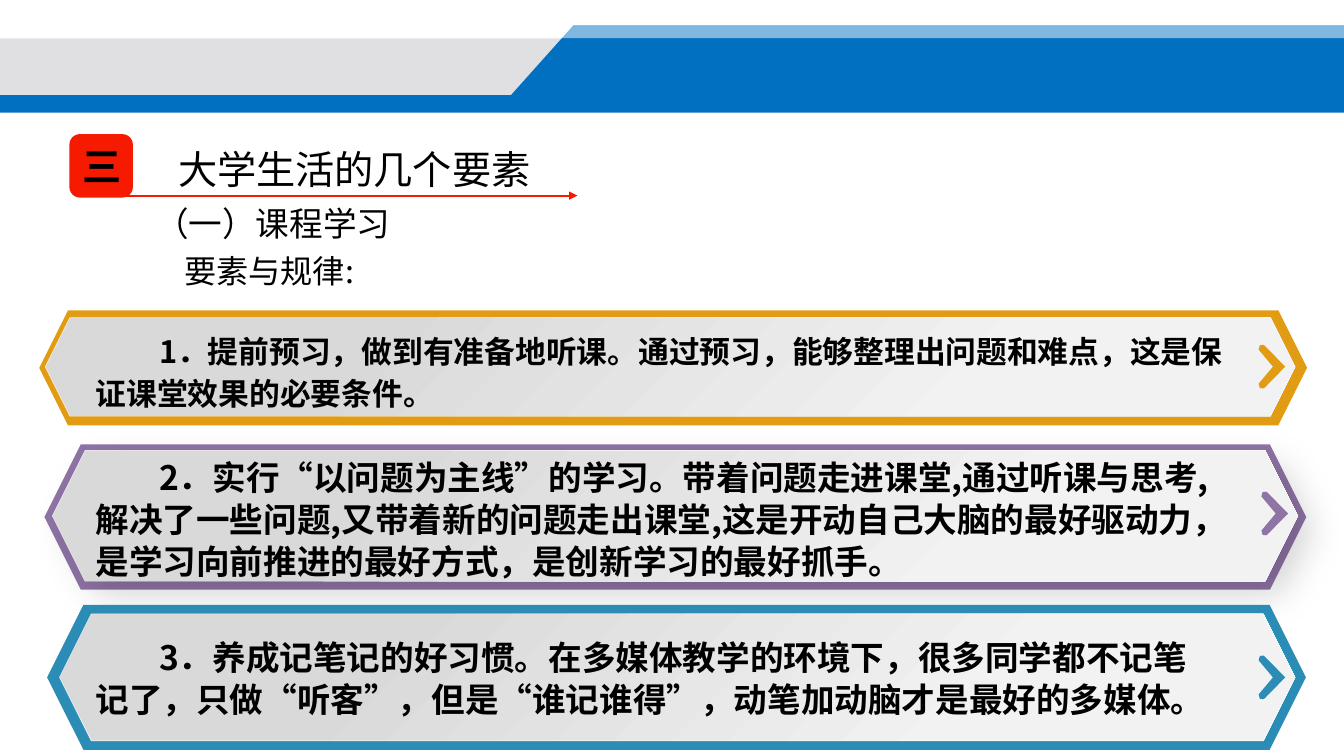
from pptx import Presentation
from pptx.dml.color import RGBColor
from pptx.enum.shapes import MSO_CONNECTOR, MSO_SHAPE
from pptx.enum.text import MSO_ANCHOR, PP_ALIGN
from pptx.oxml import parse_xml
from pptx.oxml.ns import nsdecls, qn
from pptx.util import Cm, Pt
from lxml import etree

BLACK = RGBColor(0x00, 0x00, 0x00)
WHITE = RGBColor(0xFF, 0xFF, 0xFF)
BLUE = RGBColor(0x01, 0x70, 0xC1)
GREY = RGBColor(0xE0, 0xE0, 0xE2)
RED = RGBColor(0xF6, 0x1A, 0x00)
GOLD = RGBColor(0xE1, 0x9C, 0x13)
PURPLE = RGBColor(0x8F, 0x74, 0xA6)
TEAL = RGBColor(0x2B, 0x8C, 0xB5)
PANEL_DARK = RGBColor(0xD9, 0xD9, 0xD9)
PANEL_LIGHT = RGBColor(0xF2, 0xF2, 0xF2)

SANS = "Noto Sans CJK SC"
WIDTH, HEIGHT = 33.87, 19.05

# Upper half of the chevron outline, measured in cm from its tip
CHEVRON_ARM = [(-0.51, -0.52), (-0.55, -0.55), (-0.64, -0.54), (-0.67, -0.43)]
CHEVRON_NOTCH = (-0.31, 0)

# colour, frame, panel, chevron tip, text box, size, text
POINTS = [
    (GOLD, (0.99, 7.82, 31.95, 2.9), (1.14, 8, 31.5, 2.49), (32.39, 9.24),
     (2.16, 8.13, 29.13, 2.39), 22,
     "1．提前预习，做到有准备地听课。通过预习，能够整理出问题和难点，这是保证课堂效果的必要条件。"),
    (PURPLE, (1.12, 11.2, 31.8, 3.66), (1.32, 11.35, 31.39, 3.3), (32.46, 12.94),
     (2.16, 11.35, 29.13, 3.45), 24,
     "2．实行“以问题为主线”的学习。带着问题走进课堂,通过听课与思考,解决了一些问题,"
     "又带着新的问题走出课堂,这是开动自己大脑的最好驱动力，是学习向前推进的最好方式，"
     "是创新学习的最好抓手。"),
    (TEAL, (1.19, 15.24, 31.72, 3.66), (1.5, 15.47, 31.14, 3.2), (32.39, 17.07),
     (2.16, 15.88, 28.78, 2.39), 24,
     "3．养成记笔记的好习惯。在多媒体教学的环境下，很多同学都不记笔记了，"
     "只做“听客”，但是“谁记谁得”，动笔加动脑才是最好的多媒体。"),
]


def paint(sp, color):
    sp.shadow.inherit = False
    sp.fill.solid()
    sp.fill.fore_color.rgb = color
    sp.line.fill.background()
    return sp


def add_block(s, kind, box, color):
    return paint(s.shapes.add_shape(kind, *map(Cm, box)), color)


def add_outline(s, points, color):
    start, *rest = [(Cm(x), Cm(y)) for x, y in points]
    builder = s.shapes.build_freeform(*start)
    builder.add_line_segments(rest, close=True)
    return paint(builder.convert_to_shape(), color)


def add_panel(s, box):
    """Add a hexagon shaded from grey at top left to pale at bottom right."""
    sp = add_block(s, MSO_SHAPE.HEXAGON, box, PANEL_LIGHT)
    sp.fill.gradient()
    sp.fill.gradient_angle = 315
    stops = [(0.25, PANEL_DARK), (0.75, PANEL_LIGHT)]
    for stop, (position, color) in zip(sp.fill.gradient_stops, stops):
        stop.position = position
        stop.color.rgb = color
    sp.line.color.rgb = WHITE
    sp.line.width = Pt(0.25)
    return sp


def add_shadow(sp):
    effects = sp._element.spPr.find(qn("a:effectLst"))
    effects.append(parse_xml(
        f'<a:outerShdw {nsdecls("a")} blurRad="{Pt(26)}" dist="{Pt(13)}" dir="2700000">'
        '<a:srgbClr val="000000"><a:alpha val="17000"/></a:srgbClr></a:outerShdw>'))


def add_chevron(s, tip, color):
    lower = [(x, -y) for x, y in reversed(CHEVRON_ARM)]
    offsets = [(0, 0), *CHEVRON_ARM, CHEVRON_NOTCH, *lower]
    add_outline(s, [(tip[0] + dx, tip[1] + dy) for dx, dy in offsets], color)


def write(tf, text, font, indent=0, **layout):
    """Fill a text frame with one paragraph; layout holds paragraph attributes."""
    p = tf.paragraphs[0]
    for name, value in layout.items():
        setattr(p, name, value)
    if indent:
        p._p.get_or_add_pPr().set("indent", str(Cm(indent)))
    r = p.add_run()
    r.text = text
    for name, value in font.items():
        setattr(r.font, name, value)
    r.font.color.rgb = BLACK
    ea = etree.SubElement(r._r.get_or_add_rPr(), qn("a:ea"))
    ea.set("typeface", font["name"])


def add_text(s, box, text, font, wrap=False, **layout):
    tf = s.shapes.add_textbox(*map(Cm, box)).text_frame
    tf.word_wrap = wrap
    write(tf, text, font, **layout)


def add_arrow(s, x1, y1, x2, y2):
    line = s.shapes.add_connector(MSO_CONNECTOR.STRAIGHT, Cm(x1), Cm(y1), Cm(x2), Cm(y2))
    line.line.color.rgb = RED
    line.line.width = Pt(1.5)
    etree.SubElement(line.line._get_or_add_ln(), qn("a:tailEnd")).set("type", "triangle")
    etree.SubElement(line._element.spPr, qn("a:effectLst"))


def add_banner(s):
    add_block(s, MSO_SHAPE.RECTANGLE, (0, 1.42, WIDTH, 1.42), BLUE)
    add_block(s, MSO_SHAPE.RECTANGLE, (0, 0.97, WIDTH, 1.42), GREY)
    add_outline(s, [(14.45, 0.64), (WIDTH, 0.64), (WIDTH, 2.82), (12.5, 2.82)], BLUE)
    strip = add_block(s, MSO_SHAPE.RECTANGLE, (0, 0.64, WIDTH, 0.32), WHITE)
    color = strip._element.spPr.find(qn("a:solidFill"))[0]
    etree.SubElement(color, qn("a:alpha")).set("val", "50000")


def add_heading(s):
    badge = add_block(s, MSO_SHAPE.ROUNDED_RECTANGLE, (1.75, 3.38, 1.6, 1.6), RED)
    badge.text_frame.vertical_anchor = MSO_ANCHOR.MIDDLE
    write(badge.text_frame, "三", {"name": "Roboto Condensed", "size": Pt(28), "bold": True},
          alignment=PP_ALIGN.CENTER)
    add_arrow(s, 2.57, 4.93, 14.55, 4.93)
    add_text(s, (4.24, 3.53, 9.5, 1.45), "大学生活的几个要素", {"name": "Cabin", "size": Pt(28)})
    add_text(s, (3.66, 4.78, 6.5, 1.4), "（一）课程学习", {"name": SANS, "size": Pt(24)},
             alignment=PP_ALIGN.JUSTIFY, line_spacing=Pt(35))
    add_text(s, (3.35, 6.4, 5.92, 1.04), "要素与规律:", {"name": SANS, "size": Pt(23)},
             indent=1.04, line_spacing=Pt(22))


def add_point(s, color, frame, panel, tip, box, size, text):
    add_block(s, MSO_SHAPE.HEXAGON, frame, color)
    sp = add_panel(s, panel)
    if color == PURPLE:
        add_shadow(sp)
    add_chevron(s, tip, color)
    add_text(s, box, text, {"name": SANS, "size": Pt(size), "bold": True},
             wrap=True, indent=1.6, line_spacing=Pt(30))


def main():
    prs = Presentation()
    prs.slide_width, prs.slide_height = Cm(WIDTH), Cm(HEIGHT)
    s = prs.slides.add_slide(prs.slide_layouts[6])
    add_banner(s)
    add_heading(s)
    for point in POINTS:
        add_point(s, *point)
    prs.save("out.pptx")


if __name__ == "__main__":
    main()
